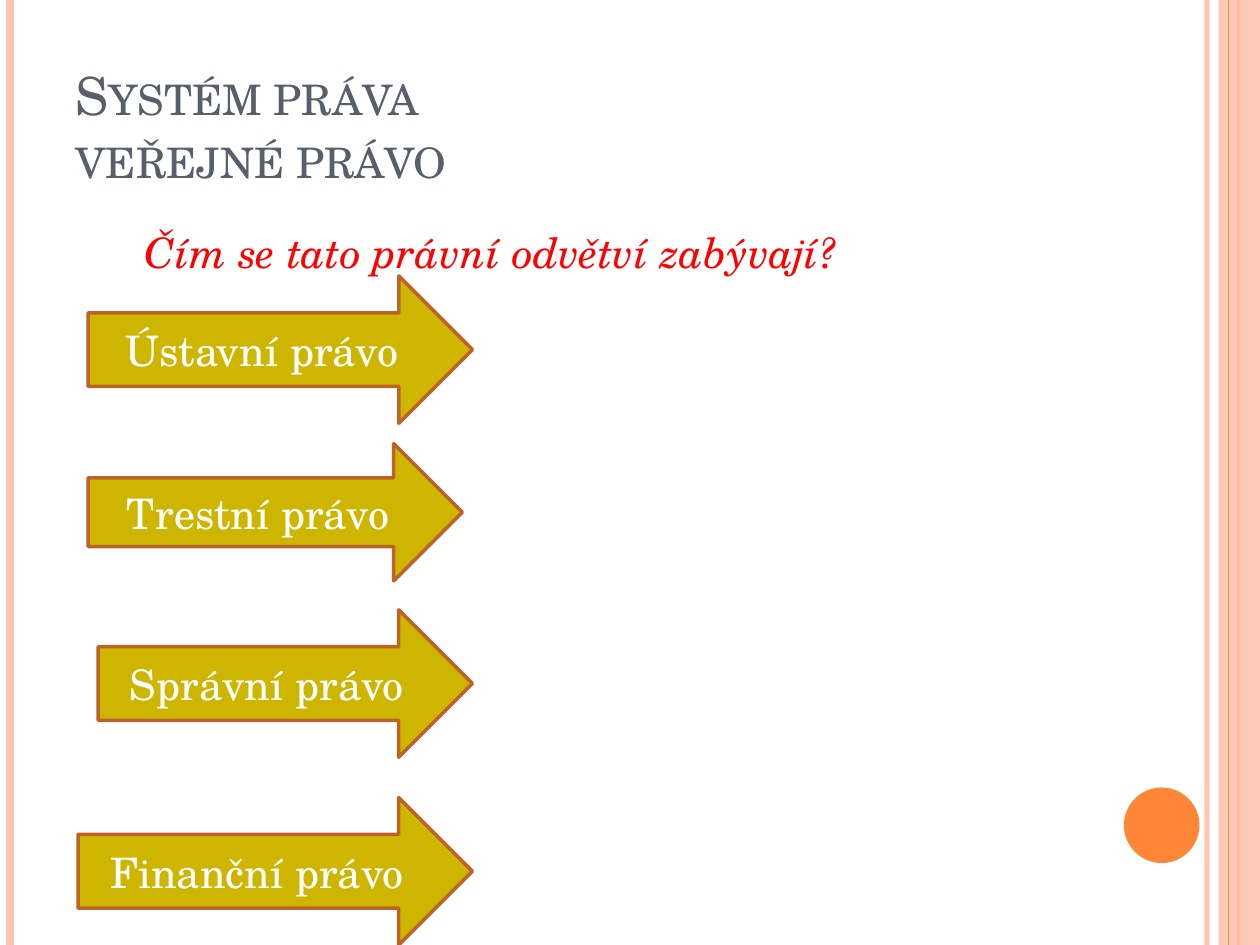
from lxml import etree
from pptx import Presentation
from pptx.dml.color import RGBColor
from pptx.enum.shapes import MSO_CONNECTOR, MSO_SHAPE
from pptx.enum.text import MSO_ANCHOR, PP_ALIGN
from pptx.oxml.ns import qn
from pptx.util import Inches, Pt

STRAIGHT = MSO_CONNECTOR.STRAIGHT
RECTANGLE, OVAL, ARROW = MSO_SHAPE.RECTANGLE, MSO_SHAPE.OVAL, MSO_SHAPE.RIGHT_ARROW
TOP, MIDDLE, BOTTOM = MSO_ANCHOR.TOP, MSO_ANCHOR.MIDDLE, MSO_ANCHOR.BOTTOM
LEFT, CENTER = PP_ALIGN.LEFT, PP_ALIGN.CENTER

WHITE = RGBColor(0xFF, 0xFF, 0xFF)
RED = RGBColor(0xFF, 0x00, 0x00)
SLATE = RGBColor(0x57, 0x5F, 0x6D)
PEACH = RGBColor(0xFE, 0xC3, 0xAE)
ORANGE = RGBColor(0xFE, 0x86, 0x37)
OLIVE = RGBColor(0xCE, 0xB5, 0x00)
RUST = RGBColor(0xBC, 0x63, 0x29)

# Grid of square cells covering the slide
COLUMNS, ROWS = 100, 75
CELL = Inches(0.1)


class SlideBuilder:
    """Holds the style and the slide; lengths are in grid cells."""

    font = "TeX Gyre Schola"
    body_size = 24

    def __init__(self, slide):
        self.slide = slide

    @staticmethod
    def cells(*values):
        return [round(value * CELL) for value in values]

    @staticmethod
    def set_opacity(element, percent):
        color = next(element.iter(qn("a:srgbClr")))
        etree.SubElement(color, qn("a:alpha"), val=str(percent * 1000))

    def vertical_line(self, column, color, width, opacity=100):
        x, bottom = self.cells(column, ROWS)
        line = self.slide.shapes.add_connector(STRAIGHT, x, 0, x, bottom)
        line.line.color.rgb = color
        line.line.width = Pt(width)
        properties = line._element.spPr
        if opacity < 100:
            self.set_opacity(properties, opacity)
        etree.SubElement(properties, qn("a:effectLst"))

    def shape(self, kind, box, fill, outline=None, opacity=100):
        shape = self.slide.shapes.add_shape(kind, *self.cells(*box))
        shape.shadow.inherit = False
        shape.fill.solid()
        shape.fill.fore_color.rgb = fill
        if opacity < 100:
            self.set_opacity(shape._element.spPr, opacity)
        if outline is None:
            shape.line.fill.background()
        else:
            shape.line.color.rgb = outline
            shape.line.width = Pt(2)
        return shape

    def set_text(self, shape, text, color, anchor, align=LEFT, size=body_size, italic=False):
        frame = shape.text_frame
        frame.word_wrap = True
        frame.vertical_anchor = anchor
        paragraph = frame.paragraphs[0]
        paragraph.text = text
        paragraph.alignment = align
        for run in paragraph.runs:
            run.font.name = self.font
            run.font.size = Pt(size)
            run.font.italic = italic
            run.font.color.rgb = color
        return paragraph

    def text_box(self, box, text, color, anchor, **style):
        shape = self.slide.shapes.add_textbox(*self.cells(*box))
        return self.set_text(shape, text, color, anchor, **style)

    def arrow(self, box, text):
        shape = self.shape(ARROW, box, OLIVE, RUST)
        self.set_text(shape, text, WHITE, MIDDLE, CENTER)


def main():
    presentation = Presentation()
    presentation.slide_width = COLUMNS * CELL
    presentation.slide_height = ROWS * CELL
    builder = SlideBuilder(presentation.slides.add_slide(presentation.slide_layouts[6]))

    # Side stripes and the circle
    builder.vertical_line(95.8, PEACH, 3, opacity=93)
    builder.vertical_line(0.8, PEACH, 4.5)
    builder.vertical_line(98.3, ORANGE, 1.5)
    builder.shape(RECTANGLE, (96.7, 0, 3.3, ROWS), PEACH, opacity=87)
    builder.vertical_line(97.5, ORANGE, 0.75)
    builder.shape(OVAL, (89.2, 62.5, 6, 6), ORANGE)

    # Title in small capitals
    title = builder.text_box((5, 3, 81.7, 12.5), "Systém práva\vveřejné právo",
                             SLATE, BOTTOM, size=30)
    for run in title.runs:
        run.font._element.set("cap", "small")

    # Question, indented from the title's edge
    question = builder.text_box((10.5, 17.5, 76.2, 53.3),
                                "Čím se tato právní odvětví zabývají?",
                                RED, TOP, italic=True)
    question.space_before = Pt(6)

    # Branches of public law
    branches = [
        ("Ústavní právo", (7, 21.9, 30.5, 11.7)),
        ("Trestní právo", (7, 35.2, 29.7, 10.9)),
        ("Správní právo", (7.8, 48.4, 29.7, 11.7)),
        ("Finanční právo", (6.2, 63.3, 31.3, 11.7)),
    ]
    for name, box in branches:
        builder.arrow(box, name)

    presentation.save("out.pptx")


if __name__ == "__main__":
    main()
